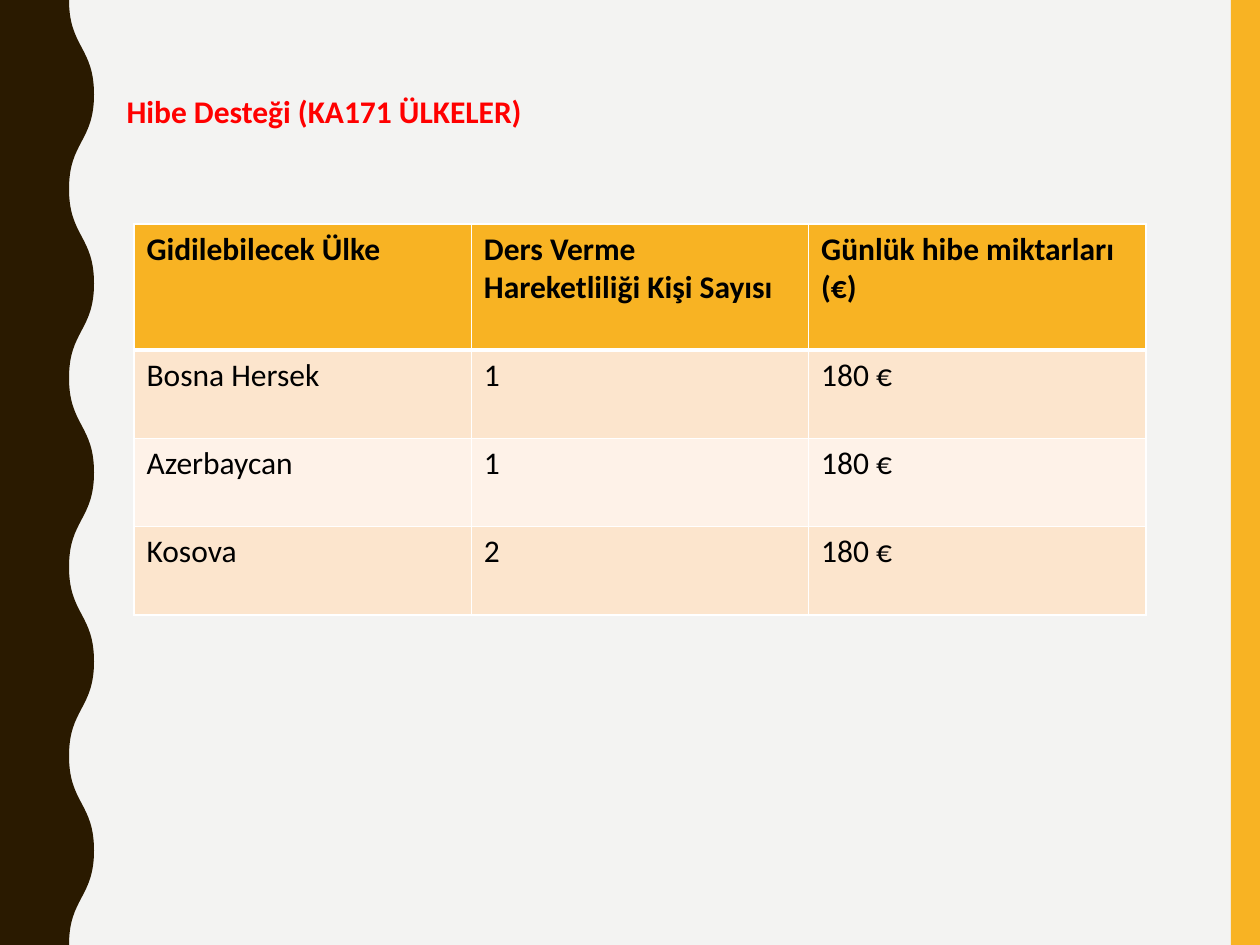
from dataclasses import dataclass

from lxml import etree
from pptx import Presentation
from pptx import util as u
from pptx.dml.color import RGBColor
from pptx.enum import shapes, text
from pptx.oxml.ns import qn

PX_PER_INCH = 126
SLIDE_WIDTH, SLIDE_HEIGHT = 1260, 945


@dataclass(frozen=True)
class Theme:
    font: str = "Calibri"
    size: int = 18
    background: str = "F3F3F2"
    accent: str = "F8B323"
    dark: str = "2A1A00"
    title: str = "FF0000"
    ink: str = "000000"
    border: str = "FFFFFF"
    bands: tuple = ("FCE5CD", "FEF2E8")
    thin: int = 1
    thick: int = 3


THEME = Theme()
HEADERS = ["Gidilebilecek Ülke", "Ders Verme Hareketliliği Kişi Sayısı", "Günlük hibe miktarları (€)"]
COUNTRIES = [
    ["Bosna Hersek", "1", "180 €"],
    ["Azerbaycan", "1", "180 €"],
    ["Kosova", "2", "180 €"],
]


def emu(pixels):
    return u.Emu(round(pixels * 914400 / PX_PER_INCH))


def paint(fill, color):
    fill.solid()
    fill.fore_color.rgb = RGBColor.from_string(color)


def style_shape(shape, color):
    paint(shape.fill, color)
    shape.line.fill.background()
    shape.shadow.inherit = False


def write(frame, words, color=THEME.ink, bold=False):
    paragraph = frame.paragraphs[0]
    paragraph.alignment = text.PP_ALIGN.LEFT
    run = paragraph.add_run()
    run.text = words
    run.font.name = THEME.font
    run.font.size = u.Pt(THEME.size)
    run.font.bold = bold
    run.font.color.rgb = RGBColor.from_string(color)


def bend(line, start, end):
    """Turn a straight segment into an S-curve with both handles at mid-height."""
    line.tag = qn("a:cubicBezTo")
    (x1, y1), (x2, y2) = start, end
    middle = (y1 + y2) // 2
    for point in list(line):
        line.remove(point)
    for x, y in [(x1, middle), (x2, middle), (x2, y2)]:
        etree.SubElement(line, qn("a:pt"), x=str(x), y=str(y))


def add_wavy_edge(slide, left, top, width, height, depth=25, waves=5):
    """Draw a band whose right side swings between width - depth and width."""
    half_waves = 2 * waves
    edge = [(emu(left + width - depth * (1 - index % 2)), emu(top + height * index / half_waves))
            for index in range(half_waves + 1)]
    builder = slide.shapes.build_freeform(*edge[0])
    builder.add_line_segments(
        [*edge[1:], (emu(left), emu(top + height)), (emu(left), emu(top))], close=True)
    band = builder.convert_to_shape()
    style_shape(band, THEME.dark)
    lines = list(band._element.iter(qn("a:lnTo")))[:half_waves]
    local = [(x - emu(left), y - emu(top)) for x, y in edge]
    for line, start, end in zip(lines, local, local[1:]):
        bend(line, start, end)


def add_side_bar(slide, left, top, width, height):
    bar = slide.shapes.add_shape(
        shapes.MSO_SHAPE.RECTANGLE, emu(left), emu(top), emu(width), emu(height))
    style_shape(bar, THEME.accent)


def place_title(slide, left, top, width, height, words):
    title = slide.shapes.title
    title.left, title.top, title.width, title.height = map(emu, (left, top, width, height))
    frame = title.text_frame
    frame.word_wrap = True
    frame.auto_size = text.MSO_AUTO_SIZE.NONE
    frame.vertical_anchor = text.MSO_ANCHOR.TOP
    write(frame, words, color=THEME.title, bold=True)


def add_borders(cell, top, bottom):
    properties = cell._tc.get_or_add_tcPr()
    weights = {"a:lnL": THEME.thin, "a:lnR": THEME.thin, "a:lnT": top, "a:lnB": bottom}
    for side, weight in weights.items():
        line = etree.SubElement(properties, qn(side), w=str(u.Pt(weight)))
        fill = etree.SubElement(line, qn("a:solidFill"))
        etree.SubElement(fill, qn("a:srgbClr"), val=THEME.border)


def add_grant_table(slide, left, top, width, height, header_height):
    rows = [HEADERS, *COUNTRIES]
    row_height = (height - header_height) / len(COUNTRIES)
    table = slide.shapes.add_table(
        len(rows), len(HEADERS), emu(left), emu(top), emu(width), emu(height)).table
    for column in table.columns:
        column.width = emu(width / len(HEADERS))
    for index, values in enumerate(rows):
        is_header = index == 0
        table.rows[index].height = emu(header_height if is_header else row_height)
        color = THEME.accent if is_header else THEME.bands[(index - 1) % 2]
        for column, value in enumerate(values):
            cell = table.cell(index, column)
            add_borders(cell, top=THEME.thick if index == 1 else THEME.thin,
                        bottom=THEME.thick if is_header else THEME.thin)
            paint(cell.fill, color)
            write(cell.text_frame, value, bold=is_header)


def main():
    presentation = Presentation()
    presentation.slide_width, presentation.slide_height = emu(SLIDE_WIDTH), emu(SLIDE_HEIGHT)
    slide = presentation.slides.add_slide(presentation.slide_layouts[5])
    paint(slide.background.fill, THEME.background)
    add_side_bar(slide, 1231, 0, 29, SLIDE_HEIGHT)
    add_wavy_edge(slide, 0, 0, 94, SLIDE_HEIGHT)
    place_title(slide, 114, 86, 557, 50, "Hibe Desteği (KA171 ÜLKELER)")
    add_grant_table(slide, 134, 224, 1012, 391, header_height=126)
    presentation.save("out.pptx")


if __name__ == "__main__":
    main()
